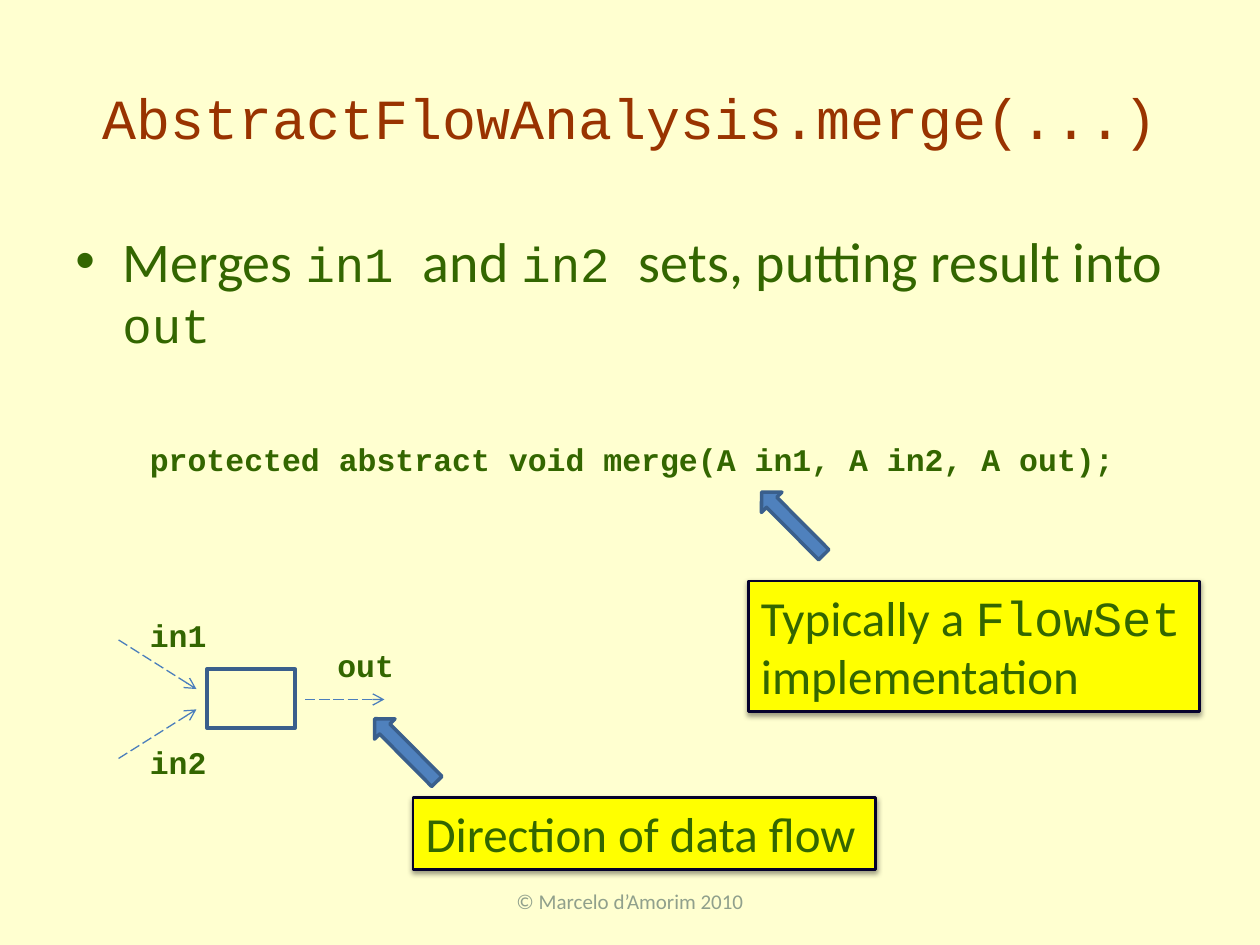
from lxml import etree
from pptx import Presentation, util as u
from pptx.dml.color import RGBColor
from pptx.enum import dml, shapes, text
from pptx.oxml import ns

SANS, MONO = "Calibri", "Courier New"
GREEN, BROWN, GREY = "336600", "993300", "90A08C"
YELLOW, NAVY, BLUE, DARK_BLUE, LINE_BLUE = "FFFF00", "05022C", "4F81BD", "3A5F8C", "4B7EBC"


def color(value):
    return RGBColor.from_string(value)


def add_xml(parent, tag, **attributes):
    """Append a DrawingML child element and return it."""
    return etree.SubElement(parent, ns.qn(tag), attributes)


class SlideBuilder:
    """Draws styled elements on the current slide; boxes are in centimetres."""

    def __init__(self, slide):
        self.slide = slide

    def add_runs(self, shape, runs, align=text.PP_ALIGN.LEFT, anchor=text.MSO_ANCHOR.TOP,
                 wrap=True):
        """Fill a shape with runs of (words, size, font, colour, bold)."""
        frame = shape.text_frame
        frame.word_wrap = wrap
        frame.vertical_anchor = anchor
        paragraph = frame.paragraphs[0]
        paragraph.alignment = align
        for words, size, font, ink, bold in runs:
            run = paragraph.add_run()
            run.text = words
            run.font.size = u.Pt(size)
            run.font.name = font
            run.font.color.rgb = color(ink)
            run.font.bold = bold
        return paragraph

    def text(self, box, runs, **layout):
        shape = self.slide.shapes.add_textbox(*map(u.Cm, box))
        return self.add_runs(shape, runs, **layout)

    def centered(self, box, run):
        self.text(box, [run], align=text.PP_ALIGN.CENTER, anchor=text.MSO_ANCHOR.MIDDLE)

    def bullet(self, box, runs):
        paragraph = self.text(box, runs)
        paragraph.space_before = u.Pt(6.4)
        properties = paragraph._p.get_or_add_pPr()
        indent = u.Cm(0.95)
        properties.set("marL", str(indent))
        properties.set("indent", str(-indent))
        add_xml(properties, "a:buFont", typeface="Arial")
        add_xml(properties, "a:buChar", char="•")

    def code(self, left, top, width, words):
        self.text((left, top, width, 1.02), [(words, 18, MONO, GREEN, True)], wrap=False)

    def shape(self, kind, box, line, width, fill=None):
        shape = self.slide.shapes.add_shape(kind, *map(u.Cm, box))
        shape.shadow.inherit = False
        if fill:
            shape.fill.solid()
            shape.fill.fore_color.rgb = color(fill)
        else:
            shape.fill.background()
        shape.line.color.rgb = color(line)
        shape.line.width = u.Pt(width)
        return shape

    def callout(self, box, runs):
        shape = self.shape(shapes.MSO_SHAPE.RECTANGLE, box, NAVY, 1.5, YELLOW)
        effects = shape._element.spPr.find(ns.qn("a:effectLst"))
        shadow = add_xml(effects, "a:outerShdw", blurRad=str(u.Pt(3.1)), dist=str(u.Pt(1.6)),
                         dir="5400000", rotWithShape="0")
        ink = add_xml(shadow, "a:srgbClr", val="000000")
        add_xml(ink, "a:alpha", val="38000")
        self.add_runs(shape, [(words, 28, font, GREEN, False) for words, font in runs])

    def pointer(self, left, top):
        arrow = self.shape(shapes.MSO_SHAPE.RIGHT_ARROW, (left, top, 1.78, 0.58),
                           DARK_BLUE, 2, BLUE)
        arrow.rotation = 225.2

    def flow(self, *ends):
        """Dashed arrow from (x1, y1) to (x2, y2)."""
        connector = self.slide.shapes.add_connector(
            shapes.MSO_CONNECTOR.STRAIGHT, *map(u.Cm, ends))
        connector.line.color.rgb = color(LINE_BLUE)
        connector.line.width = u.Pt(0.75)
        connector.line.dash_style = dml.MSO_LINE.LONG_DASH
        line = connector._element.spPr.find(ns.qn("a:ln"))
        add_xml(line, "a:tailEnd", type="arrow")
        add_xml(connector._element.spPr, "a:effectLst")


def main():
    presentation = Presentation()
    presentation.slide_width, presentation.slide_height = u.Cm(25.4), u.Cm(19.05)
    slide = presentation.slides.add_slide(presentation.slide_layouts[6])
    slide.background.fill.solid()
    slide.background.fill.fore_color.rgb = color("FFFFD0")
    builder = SlideBuilder(slide)

    builder.centered((1.27, 0.76, 22.86, 3.18),
                     ("AbstractFlowAnalysis.merge(...)", 32.4, MONO, BROWN, False))
    sentence = ["Merges ", "in1 ", "and ", "in2 ", "sets, putting result into ", "out"]
    builder.bullet((1.27, 4.45, 22.86, 12.57), [
        (words, 28, MONO, GREEN, False) if index % 2 else (words, 32, SANS, GREEN, False)
        for index, words in enumerate(sentence)])
    builder.centered((8.68, 17.65, 8.04, 1.02),
                     ("© Marcelo d’Amorim 2010", 12, SANS, GREY, False))

    builder.code(2.77, 8.74, 20.04, "protected abstract void merge(A in1, A in2, A out);")
    builder.callout((15.09, 11.71, 9.09, 2.64),
                    [("Typically a ", SANS), ("FlowSet ", MONO), ("implementation", SANS)])
    builder.pointer(15.09, 10.26)

    builder.shape(shapes.MSO_SHAPE.RECTANGLE, (4.17, 13.49, 1.78, 1.19), DARK_BLUE, 2)
    builder.flow(2.39, 12.9, 3.96, 13.89)
    builder.flow(2.39, 15.29, 3.96, 14.3)
    builder.flow(6.15, 14.1, 7.75, 14.1)
    for left, top, name in [(2.77, 12.29, "in1"), (2.77, 14.86, "in2"), (6.55, 12.9, "out")]:
        builder.code(left, top, 1.65, name)

    builder.callout((8.33, 16.08, 9.32, 1.45), [("Direction of data flow", SANS)])
    builder.pointer(7.29, 14.83)

    presentation.save("out.pptx")


if __name__ == "__main__":
    main()
